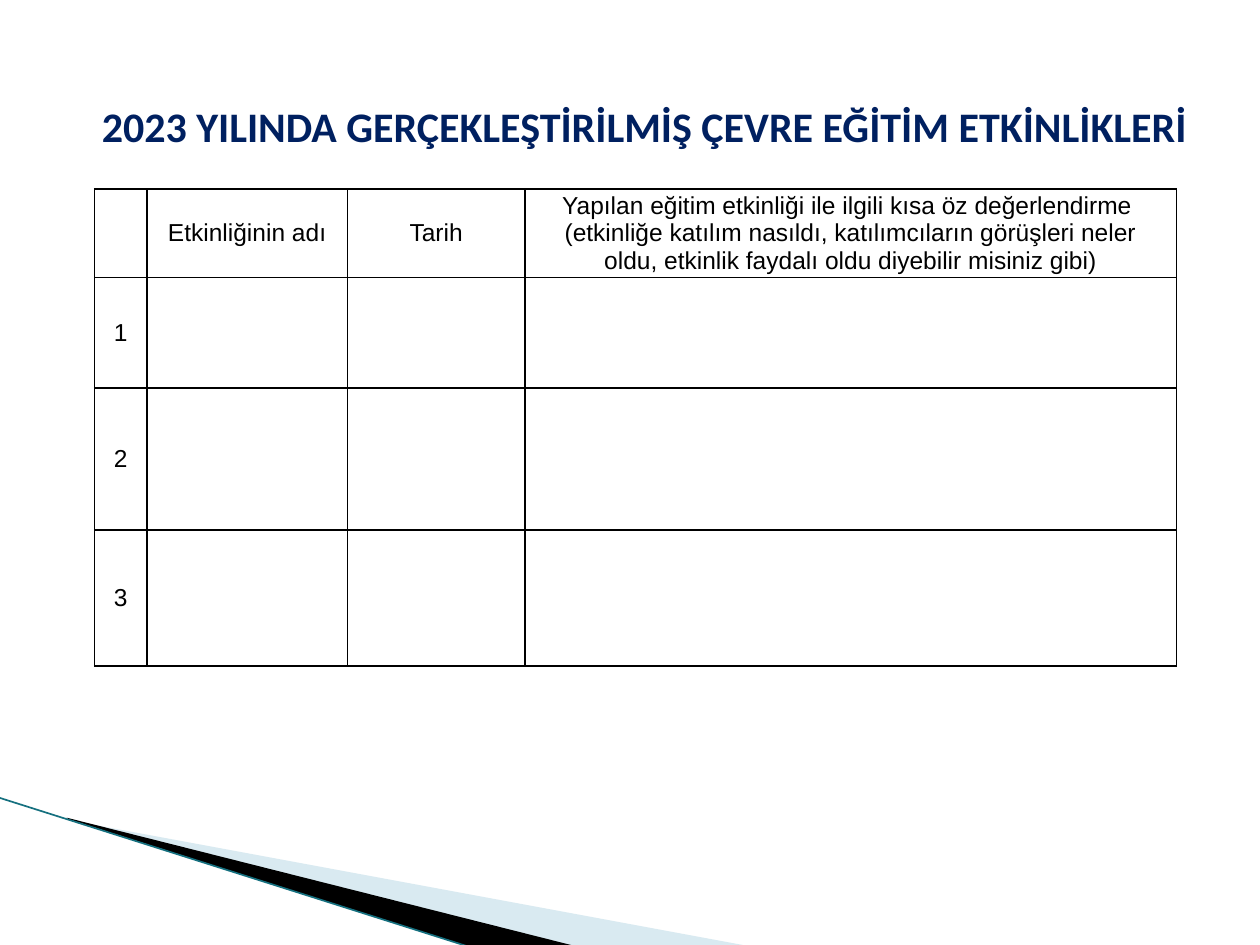
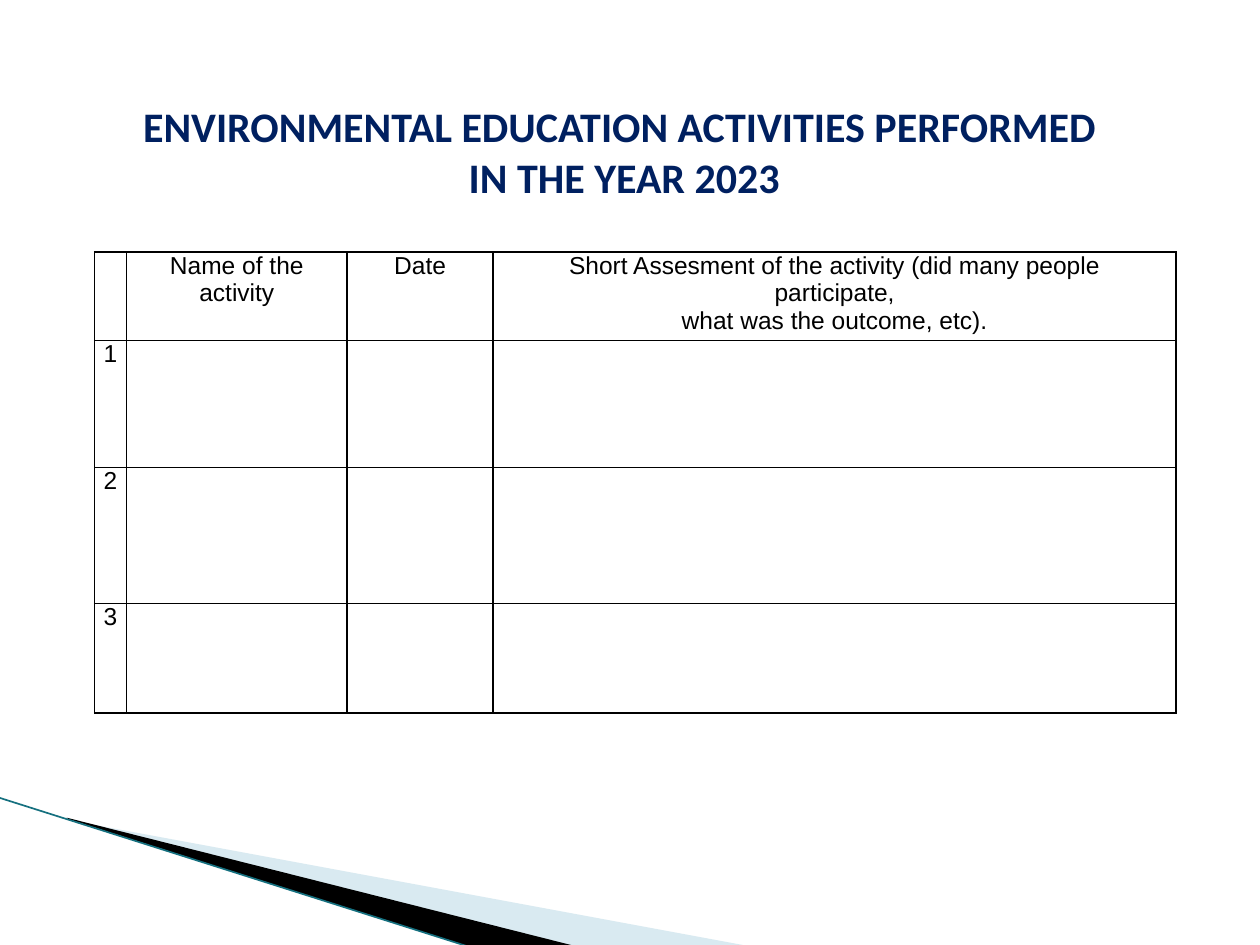
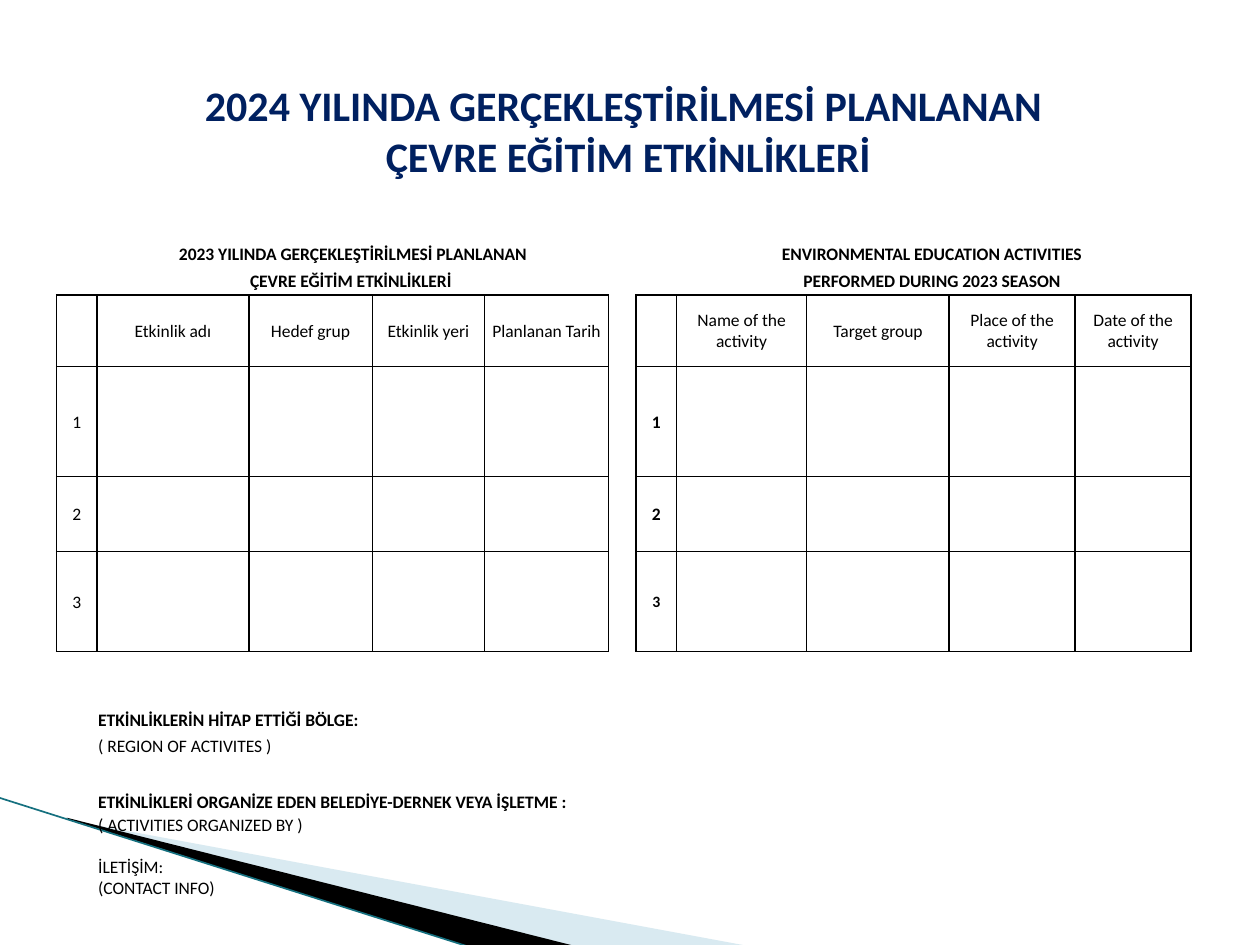
from lxml import etree
from pptx import Presentation
from pptx import util as u
from pptx.dml.color import RGBColor
from pptx.enum import shapes, text
from pptx.oxml import ns

SLIDE_COLUMNS, SLIDE_ROWS = 100, 75
GRID_STEP = u.Inches(10) / SLIDE_COLUMNS
COLORS = {"title": "002060", "ink": "000000", "pale": "A0CBDC", "edge": "15707F"}
TITLE_FONT = {"name": "Calibri", "size": u.Pt(24), "bold": True}
ACTIVITY_FONT = {"name": "Arial", "size": u.Pt(14), "bold": False}
PLAN_FONT = {"name": "Calibri", "size": u.Pt(10), "bold": False}
BOLD = {"bold": True}
NO_STYLE = "{2D5ABB26-0587-4C30-8999-92F81FD0307C}"
CENTER, LEFT = text.PP_ALIGN.CENTER, text.PP_ALIGN.LEFT
MIDDLE, TOP, BOTTOM = (text.MSO_ANCHOR.MIDDLE, text.MSO_ANCHOR.TOP,
                       text.MSO_ANCHOR.BOTTOM)


def grid(*steps):
    """Turn slide grid steps into lengths."""
    return [u.Emu(round(step * GRID_STEP)) for step in steps]


def rgb(name):
    """Look up a named colour."""
    return RGBColor.from_string(COLORS[name])


def apply(target, values):
    """Set every attribute given in a dict."""
    for key, value in values.items():
        setattr(target, key, value)


def write(frame, wording, font, color="ink", align=CENTER):
    """Fill a text frame with one paragraph per line of wording."""
    frame.text = wording
    for paragraph in frame.paragraphs:
        paragraph.alignment = align
        for run in paragraph.runs:
            apply(run.font, font)
            run.font.color.rgb = rgb(color)
        if not paragraph.runs:
            etree.SubElement(paragraph._p, ns.qn("a:endParaRPr"),
                             sz=str(round(font["size"].pt * 100)))


def wedge(slide, corners, color, alpha=None):
    """Draw one filled sliver of the corner decoration."""
    points = [grid(*corner) for corner in corners]
    builder = slide.shapes.build_freeform(*points[0], scale=1.0)
    builder.add_line_segments(points[1:], close=True)
    sliver = builder.convert_to_shape()
    sliver.shadow.inherit = False
    sliver.fill.solid()
    sliver.fill.fore_color.rgb = rgb(color)
    sliver.line.fill.background()
    if alpha:
        tint = sliver.fill._xPr.find(".//" + ns.qn("a:srgbClr"))
        etree.SubElement(tint, ns.qn("a:alpha"), val=str(alpha * 1000))


def corner_decoration(slide):
    """Draw the slivers and edge line in the lower left corner."""
    wedge(slide, [(5.5, 65.1), (59.5, 75.1), (45.6, 75.1), (5.5, 65)], "pale", 40)
    wedge(slide, [(5.3, 64.9), (45.7, 75.1), (37.4, 75.2), (5.4, 65)], "ink")
    edge = slide.shapes.add_connector(shapes.MSO_CONNECTOR.STRAIGHT,
                                      *grid(-0.1, 63.3, 37.4, 75.2))
    edge.line.color.rgb = rgb("edge")
    edge.line.width = u.Pt(0.95)
    etree.SubElement(edge.element.spPr, ns.qn("a:effectLst"))


def title(slide, box, wording):
    """Place the slide title in its box."""
    frame = slide.shapes.add_textbox(*grid(*box)).text_frame
    apply(frame, {"word_wrap": False, "auto_size": text.MSO_AUTO_SIZE.SHAPE_TO_FIT_TEXT})
    write(frame, wording, TITLE_FONT, "title")


def rule_cell(cell, sides):
    """Draw black borders on the given sides of a cell."""
    properties = cell._tc.get_or_add_tcPr()
    for side in sides:
        line = etree.SubElement(properties, ns.qn(f"a:ln{side}"), w=str(u.Pt(1)))
        fill = etree.SubElement(line, ns.qn("a:solidFill"))
        etree.SubElement(fill, ns.qn("a:srgbClr"), val=COLORS["ink"])


def add_grid_table(slide, corner, columns, rows, sides_at):
    """Add an unstyled table and rule the sides that sides_at names."""
    frame = slide.shapes.add_table(len(rows), len(columns),
                                   *grid(*corner, sum(columns), sum(rows)))
    frame.element.find(".//" + ns.qn("a:tableStyleId")).text = NO_STYLE
    table = frame.table
    apply(table, {"first_row": False, "horz_banding": False})
    for column, width in zip(table.columns, grid(*columns)):
        column.width = width
    for row, height in zip(table.rows, grid(*rows)):
        row.height = height
    for r in range(len(rows)):
        for c in range(len(columns)):
            rule_cell(table.cell(r, c), sides_at(r, c))
            table.cell(r, c).fill.background()
    return table


def fill_table(table, entries, font, margins, anchor):
    """Write entries, keyed by row and column, and size the empty cells."""
    for r in range(len(table.rows)):
        for c in range(len(table.columns)):
            cell = table.cell(r, c)
            wording, changes, align = entries.get((r, c), ("", {}, CENTER))
            apply(cell, margins)
            cell.vertical_anchor = anchor if align == CENTER else BOTTOM
            write(cell.text_frame, wording, font | changes, align=align)


def activity_slide(slide, heading, title_box, corner, columns, rows, headers, anchor):
    """Build a slide that reports three past activities."""
    title(slide, title_box, heading)
    table = add_grid_table(slide, corner, columns, rows, lambda r, c: "LRTB")
    entries = {(0, c): (label, {}, CENTER) for c, label in enumerate(headers, 1)}
    entries |= {(r, 0): (str(r), {}, CENTER) for r in (1, 2, 3)}
    margins = dict(margin_left=u.Inches(0.07), margin_right=u.Inches(0.07),
                   margin_top=0, margin_bottom=0)
    fill_table(table, entries, ACTIVITY_FONT, margins, anchor)
    assessment = table.cell(0, len(headers))
    apply(assessment, dict.fromkeys(("margin_left", "margin_right"), u.Inches(0.11)))


def plan_half(table, first, captions, headers, number_fonts):
    """Merge one language's cells and return its entries."""
    entries = {}
    for r, caption in enumerate(captions):
        table.cell(r, first + 1).merge(table.cell(r, first + 4))
        entries[r, first + 1] = (caption, BOLD, CENTER)
    for c in range(first, first + 5):
        for r in (2, 4):
            table.cell(r, c).merge(table.cell(r + 1, c))
    for c, label in enumerate(headers, first + 1):
        entries[2, c] = (label, {}, CENTER)
    for number, (r, font) in enumerate(zip((4, 6, 7), number_fonts), 1):
        entries[r, first] = (str(number), font, CENTER)
    return entries


def plan_notes(table):
    """Merge the cells below the plan and return their entries."""
    notes = [
        (10, 3, "ETKİNLİKLERİN HİTAP ETTİĞİ BÖLGE:", BOLD),
        (11, 2, "( REGION OF ACTIVITES )", {}),
        (13, 6, "ETKİNLİKLERİ ORGANİZE EDEN BELEDİYE-DERNEK VEYA İŞLETME :", BOLD),
        (14, 2, "( ACTIVITIES ORGANIZED BY )\nİLETİŞİM:\n(CONTACT INFO)", {}),
    ]
    for r, width, _, _ in notes:
        table.cell(r, 1).merge(table.cell(r, width))
    return {(r, 1): (wording, font, LEFT) for r, _, wording, font in notes}


def plan_slide(slide):
    """Build the slide with next year's plan in two languages."""
    gap_column = 5
    ruled_rows = {2: "LRT", 3: "LRB", 4: "LRT", 5: "LRB", 6: "LRTB", 7: "LRTB"}
    columns = [3.2, 12.05, 9.8, 8.9, 9.85, 2.2, 3.2, 10.35, 11.3, 10, 9.2]
    rows = [2.1, 2.2, 3.55, 2.1, 6.1, 2.65, 5.95, 7.95] + [2.1] * 5 + [2.35, 6.5]
    table = add_grid_table(
        slide, (4.5, 19.13), columns, rows,
        lambda r, c: "" if c == gap_column else ruled_rows.get(r, ""))
    entries = plan_half(
        table, 0,
        ["2023 YILINDA GERÇEKLEŞTİRİLMESİ PLANLANAN", "ÇEVRE EĞİTİM ETKİNLİKLERİ "],
        ["Etkinlik adı", "Hedef grup", "Etkinlik yeri", "Planlanan Tarih"],
        [{}, {}, {}])
    entries |= plan_half(
        table, gap_column + 1,
        ["ENVIRONMENTAL EDUCATION ACTIVITIES ", "PERFORMED DURING 2023 SEASON "],
        ["Name of the activity", "Target group", "Place of the activity",
         "Date of the activity"],
        [BOLD, BOLD, BOLD | {"size": u.Pt(9)}])
    entries |= plan_notes(table)
    margins = dict.fromkeys(("margin_left", "margin_right", "margin_top"), u.Inches(0.01))
    fill_table(table, entries, PLAN_FONT, margins | {"margin_bottom": 0}, MIDDLE)
    contact = table.cell(14, 1).text_frame.paragraphs[1]
    contact.space_before = u.Pt(12)
    title(slide, (15, 5.83, 69, 9.1),
          "2024 YILINDA GERÇEKLEŞTİRİLMESİ PLANLANAN\n ÇEVRE EĞİTİM ETKİNLİKLERİ")


def main():
    """Build the three slides and save them."""
    deck = Presentation()
    deck.slide_width, deck.slide_height = grid(SLIDE_COLUMNS, SLIDE_ROWS)
    turkish, english, plan = [deck.slides.add_slide(deck.slide_layouts[6])
                              for _ in range(3)]
    for slide in (turkish, english, plan):
        corner_decoration(slide)
    activity_slide(
        turkish, "2023 YILINDA GERÇEKLEŞTİRİLMİŞ ÇEVRE EĞİTİM ETKİNLİKLERİ",
        (6.7, 7.5, 88.9, 5), (7.5, 15), [4.17, 15.9, 14.1, 51.7], [7, 8.8, 11.25, 10.8],
        ["Etkinliğinin adı", "Tarih",
         "Yapılan eğitim etkinliği ile ilgili kısa öz değerlendirme \n"
         "(etkinliğe katılım nasıldı, katılımcıların görüşleri neler oldu, "
         "etkinlik faydalı oldu diyebilir misiniz gibi)"], MIDDLE)
    activity_slide(
        english, "ENVIRONMENTAL EDUCATION ACTIVITIES PERFORMED \nIN THE YEAR 2023",
        (10, 7.5, 79.1, 9.1), (7.5, 20), [2.55, 17.5, 11.6, 54.2], [7, 10.1, 10.8, 8.7],
        ["Name of the activity", "Date",
         "Short Assesment of the activity (did many people participate,\n"
         "what was the outcome, etc)."], TOP)
    plan_slide(plan)
    deck.save("out.pptx")


if __name__ == "__main__":
    main()
